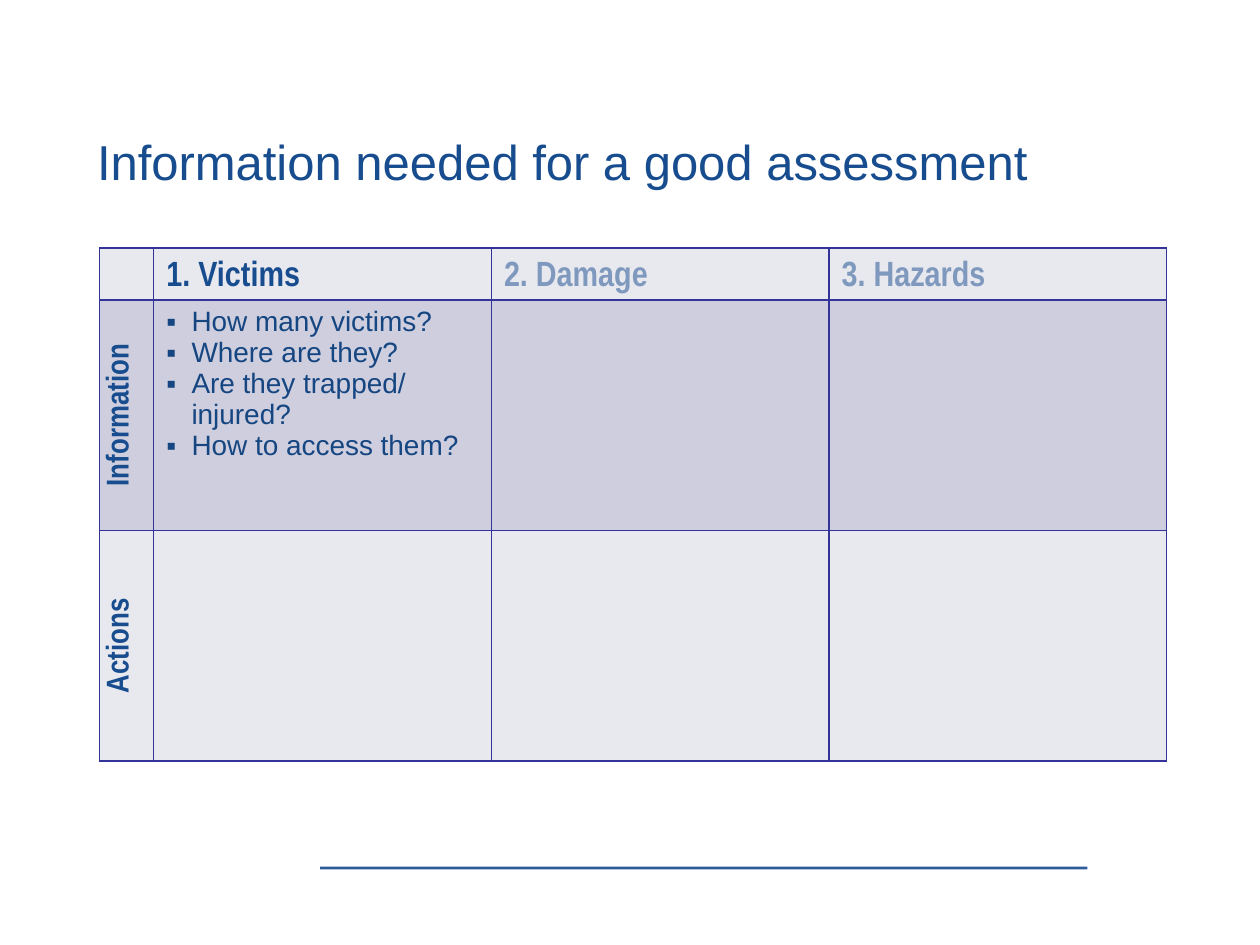
from lxml import etree
from pptx import Presentation, util as u
from pptx.dml.color import RGBColor
from pptx.enum import shapes, text
from pptx.oxml.ns import qn

COLORS = {"blue": "174C8E", "body": "154681", "border": "333399",
          "light": "E8E8EF", "shaded": "CECEDE"}

TITLE = "Information needed for a good assessment"
TOPICS = ["1. Victims", "2. Damage", "3. Hazards"]
CURRENT_TOPIC = 0
STAGES = ["Information", "Actions"]
QUESTIONS = ["How many victims?", "Where are they?",
             "Are they trapped/ injured?", "How to access them?"]

SLIDE_W, SLIDE_H = 10, 7.5
TABLE_LEFT, TABLE_TOP = 0.79, 1.97
COLUMNS = [0.43] + [2.68] * len(TOPICS)
ROWS = [0.41] + [1.83] * len(STAGES)
RULE = {"from": 2.54, "to": 8.63, "y": 6.89}

FONTS = {
    "title": {"name": "Arial", "size": u.Pt(28), "bold": False},
    "topic": {"name": "Arial Narrow", "size": u.Pt(20), "bold": True},
    "stage": {"name": "Arial Narrow", "size": u.Pt(18), "bold": True},
    "question": {"name": "Arial", "size": u.Pt(16), "bold": False},
}


def add_xml(parent, tag, **attributes):
    return etree.SubElement(parent, qn(tag), attributes)


def set_all(target, values):
    for name, value in values.items():
        setattr(target, name, value)


def fade(fill, percent):
    """Make a solid fill partly transparent, leaving percent opacity."""
    color = fill._xPr.find(".//" + qn("a:srgbClr"))
    add_xml(color, "a:alpha", val=str(percent * 1000))


def write(paragraph, words, style, color="blue"):
    run = paragraph.add_run()
    run.text = words
    set_all(run.font, FONTS[style])
    run.font.color.rgb = RGBColor.from_string(COLORS[color])
    return run


def add_bullet(paragraph):
    properties = paragraph._p.get_or_add_pPr()
    properties.set("marL", str(u.Inches(0.2)))
    properties.set("indent", str(-u.Inches(0.2)))
    add_xml(properties, "a:buFont", typeface="Arial")
    add_xml(properties, "a:buChar", char="▪")


def style_cell(cell, color):
    properties = cell._tc.get_or_add_tcPr()
    for side in ("lnL", "lnR", "lnT", "lnB"):
        border = add_xml(properties, "a:" + side, w=str(u.Pt(1)))
        solid = add_xml(border, "a:solidFill")
        add_xml(solid, "a:srgbClr", val=COLORS["border"])
    cell.fill.solid()
    cell.fill.fore_color.rgb = RGBColor.from_string(COLORS[color])


def add_title(slide):
    title = slide.shapes.title
    set_all(title, {"left": u.Inches(0.67), "top": u.Inches(0.98),
                    "width": u.Inches(9.08), "height": u.Inches(0.64)})
    set_all(title.text_frame, {
        "margin_left": u.Inches(0.1), "margin_right": u.Inches(0.1),
        "margin_top": u.Inches(0.06), "margin_bottom": u.Inches(0.06),
        "word_wrap": True, "auto_size": text.MSO_AUTO_SIZE.NONE,
        "vertical_anchor": text.MSO_ANCHOR.TOP})
    heading = title.text_frame.paragraphs[0]
    heading.alignment = text.PP_ALIGN.LEFT
    write(heading, TITLE, "title")


def add_assessment(slide):
    frame = slide.shapes.add_table(
        len(ROWS), len(COLUMNS), u.Inches(TABLE_LEFT), u.Inches(TABLE_TOP),
        u.Inches(sum(COLUMNS)), u.Inches(sum(ROWS)))
    table = frame.table
    for column, width in zip(table.columns, COLUMNS):
        column.width = u.Inches(width)
    for index, (row, height) in enumerate(zip(table.rows, ROWS)):
        row.height = u.Inches(height)
        for cell in row.cells:
            style_cell(cell, "shaded" if index % 2 else "light")

    for index, topic in enumerate(TOPICS):
        cell = table.cell(0, index + 1)
        cell.vertical_anchor = text.MSO_ANCHOR.BOTTOM
        run = write(cell.text_frame.paragraphs[0], topic, "topic")
        if index != CURRENT_TOPIC:
            fade(run.font.fill, 50)

    for index, stage in enumerate(STAGES, 1):
        cell = table.cell(index, 0)
        cell._tc.get_or_add_tcPr().set("vert", "vert270")
        label = cell.text_frame.paragraphs[0]
        label.alignment = text.PP_ALIGN.CENTER
        write(label, stage, "stage")

    answers = table.cell(1, CURRENT_TOPIC + 1).text_frame
    for index, question in enumerate(QUESTIONS):
        paragraph = answers.add_paragraph() if index else answers.paragraphs[0]
        add_bullet(paragraph)
        write(paragraph, question, "question", "body")


def add_footer_rule(slide):
    y = u.Inches(RULE["y"])
    rule = slide.shapes.add_connector(
        shapes.MSO_CONNECTOR.STRAIGHT,
        u.Inches(RULE["from"]), y, u.Inches(RULE["to"]), y)
    rule.line.width = u.Pt(1.6)
    rule.line.color.rgb = RGBColor.from_string(COLORS["blue"])
    fade(rule.line.fill, 90)
    add_xml(rule._element.spPr, "a:effectLst")


def main():
    deck = Presentation()
    deck.slide_width, deck.slide_height = u.Inches(SLIDE_W), u.Inches(SLIDE_H)
    slide = deck.slides.add_slide(deck.slide_layouts.get_by_name("Title Only"))
    add_footer_rule(slide)
    add_title(slide)
    add_assessment(slide)
    deck.save("out.pptx")


if __name__ == "__main__":
    main()
